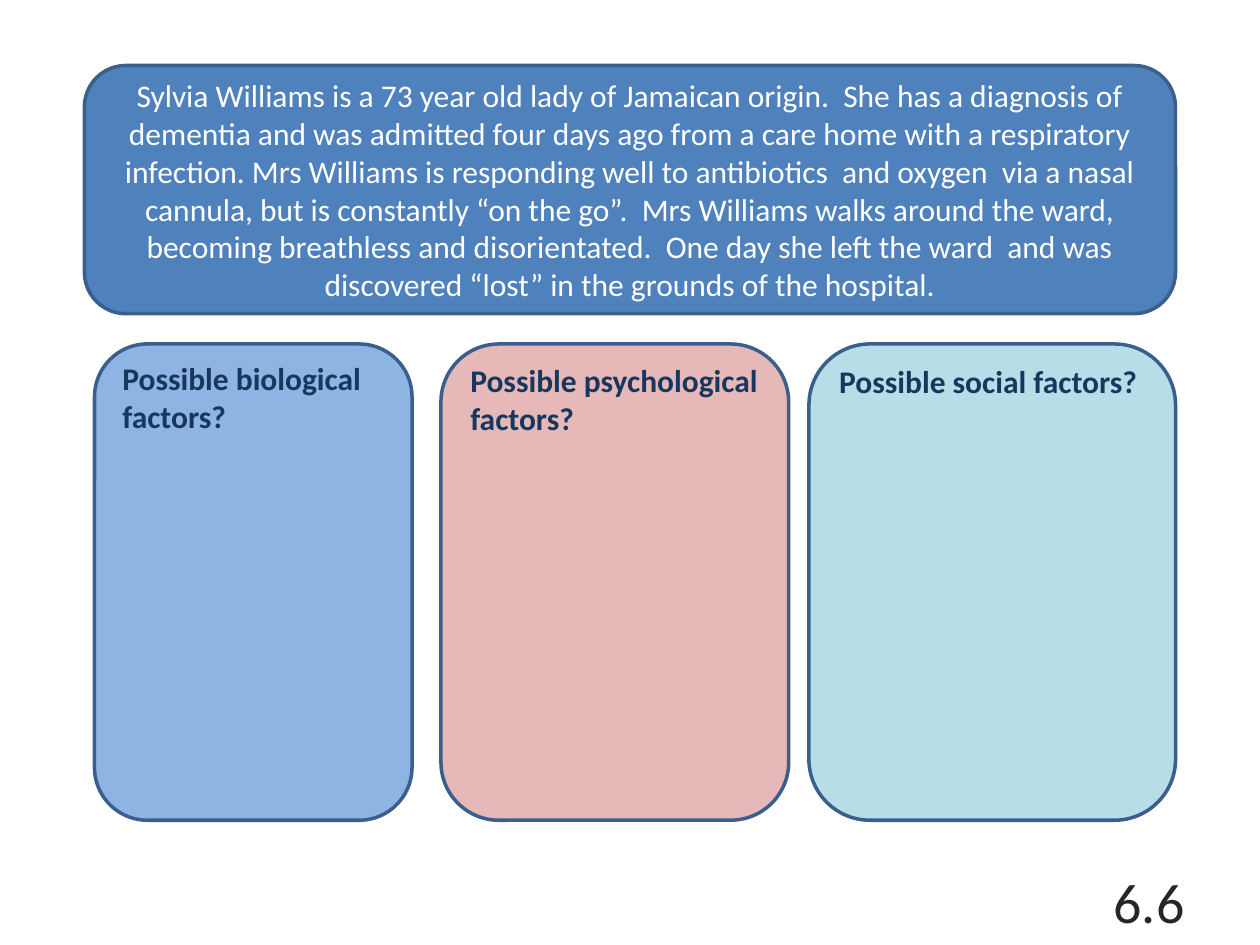
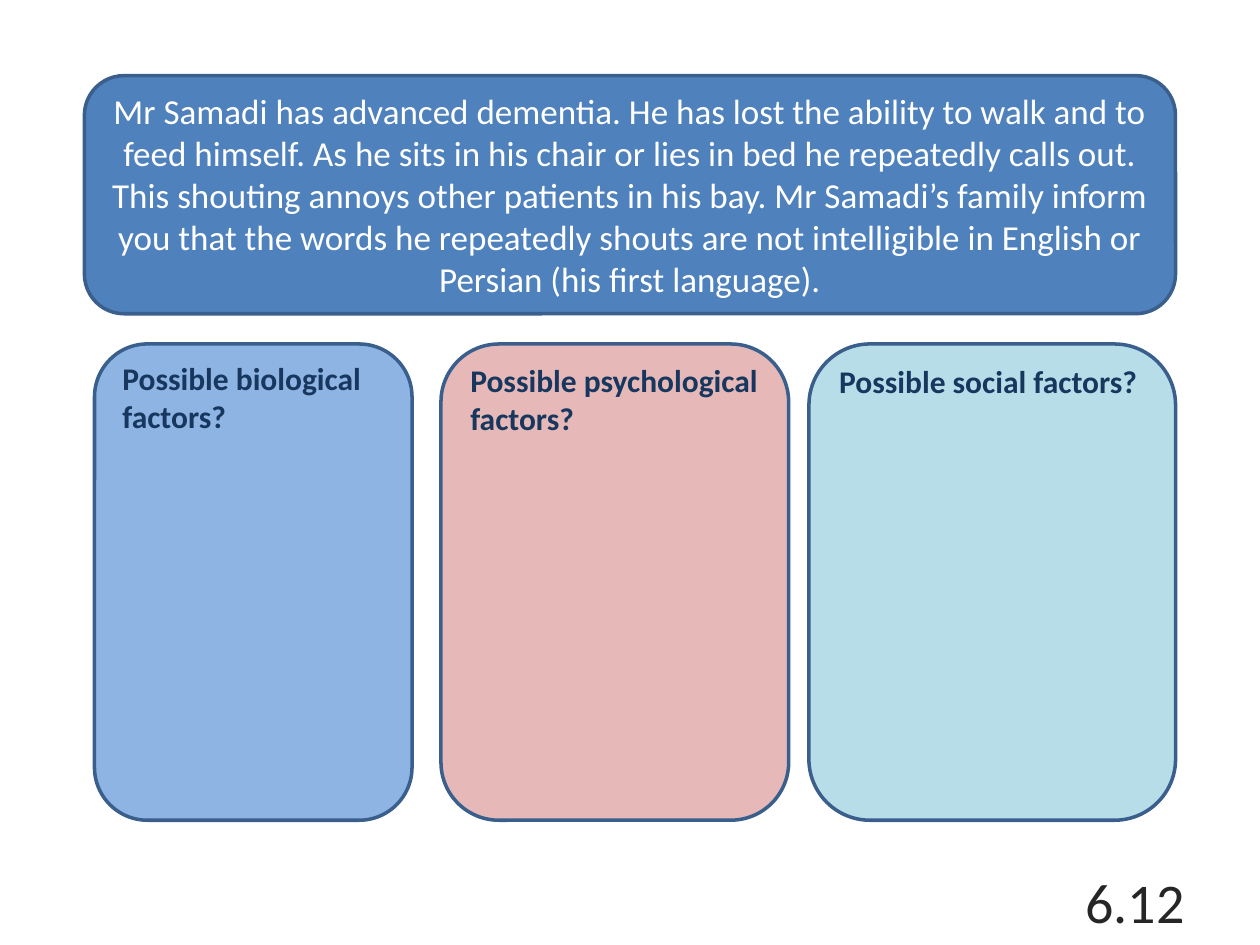
from pptx import Presentation
from pptx.dml.color import RGBColor
from pptx.enum.shapes import MSO_SHAPE as Shape
from pptx.enum.text import MSO_ANCHOR as Anchor, PP_ALIGN as Align
from pptx.util import Inches, Pt

FONT = "Calibri"
COLOURS = {
    "case": "4F81BD",
    "outline": "3A5F8C",
    "biological": "8EB4E3",
    "psychological": "E6B9B8",
    "social": "B7DEE8",
    "heading": "17375E",
    "case text": "FFFFFF",
    "number": "262626",
}

# Factor panels: name, left, width
PANELS = [
    ("biological", 0.75, 2.52),
    ("psychological", 3.5, 2.76),
    ("social", 6.42, 2.91),
]
PANEL_TOP, PANEL_HEIGHT = 2.73, 3.78
CASE_LEFT, CASE_WIDTH, CASE_BOTTOM = 0.67, 8.66, 2.49

# Case studies: slide number, top of the case box, text size, text
CASES = [
    ("6.6", 0.52, 18,
     "Sylvia Williams is a 73 year old lady of Jamaican origin.  She has a "
     "diagnosis of dementia and was admitted four days ago from a care home "
     "with a respiratory infection. Mrs Williams is responding well to "
     "antibiotics  and oxygen  via a nasal cannula, but is constantly “on the "
     "go”.  Mrs Williams walks around the ward, becoming breathless and "
     "disorientated.  One day she left the ward  and was discovered “lost” in "
     "the grounds of the hospital."),
    ("6.12", 0.6, 20,
     "Mr Samadi has advanced dementia. He has lost the ability to walk and to "
     "feed himself. As he sits in his chair or lies in bed he repeatedly calls "
     "out. This shouting annoys other patients in his bay. Mr Samadi’s family "
     "inform you that the words he repeatedly shouts are not intelligible in "
     "English or Persian (his first language)."),
]


def colour(name):
    return RGBColor.from_string(COLOURS[name])


class CaseDeck:
    """Holds the presentation, its style and the current slide."""

    def __init__(self):
        self.presentation = Presentation()
        self.presentation.slide_width = Inches(10)
        self.presentation.slide_height = Inches(7.5)
        self.slide = None

    def new_slide(self):
        blank_layout = self.presentation.slide_layouts[6]
        self.slide = self.presentation.slides.add_slide(blank_layout)

    def set_text(self, shape, text, size, text_colour, align,
                 anchor=Anchor.MIDDLE, bold=False):
        frame = shape.text_frame
        frame.word_wrap = True
        frame.vertical_anchor = anchor
        frame.text = text
        paragraph = frame.paragraphs[0]
        paragraph.alignment = align
        font = paragraph.runs[0].font
        font.name, font.size, font.bold = FONT, Pt(size), bold
        font.color.rgb = colour(text_colour)

    def rounded_box(self, left, top, width, height, fill):
        shape = self.slide.shapes.add_shape(
            Shape.ROUNDED_RECTANGLE,
            Inches(left), Inches(top), Inches(width), Inches(height))
        shape.shadow.inherit = False
        shape.fill.solid()
        shape.fill.fore_color.rgb = colour(fill)
        shape.line.color.rgb = colour("outline")
        shape.line.width = Pt(2)
        return shape

    def case_box(self, top, size, text):
        box = self.rounded_box(CASE_LEFT, top, CASE_WIDTH, CASE_BOTTOM - top, "case")
        self.set_text(box, text, size, "case text", Align.CENTER)

    def factor_panel(self, name, left, width):
        panel = self.rounded_box(left, PANEL_TOP, width, PANEL_HEIGHT, name)
        panel.text_frame.margin_top = 0
        self.set_text(panel, f"Possible {name} factors?", 18, "heading",
                      Align.LEFT, Anchor.TOP, bold=True)

    def slide_number(self, text):
        box = self.slide.shapes.add_textbox(
            Inches(7.17), Inches(6.95), Inches(2.33), Inches(0.4))
        self.set_text(box, text, 32, "number", Align.RIGHT)


def main():
    deck = CaseDeck()
    for number, top, size, text in CASES:
        deck.new_slide()
        deck.slide_number(number)
        deck.case_box(top, size, text)
        for panel in PANELS:
            deck.factor_panel(*panel)
    deck.presentation.save("out.pptx")


if __name__ == "__main__":
    main()
